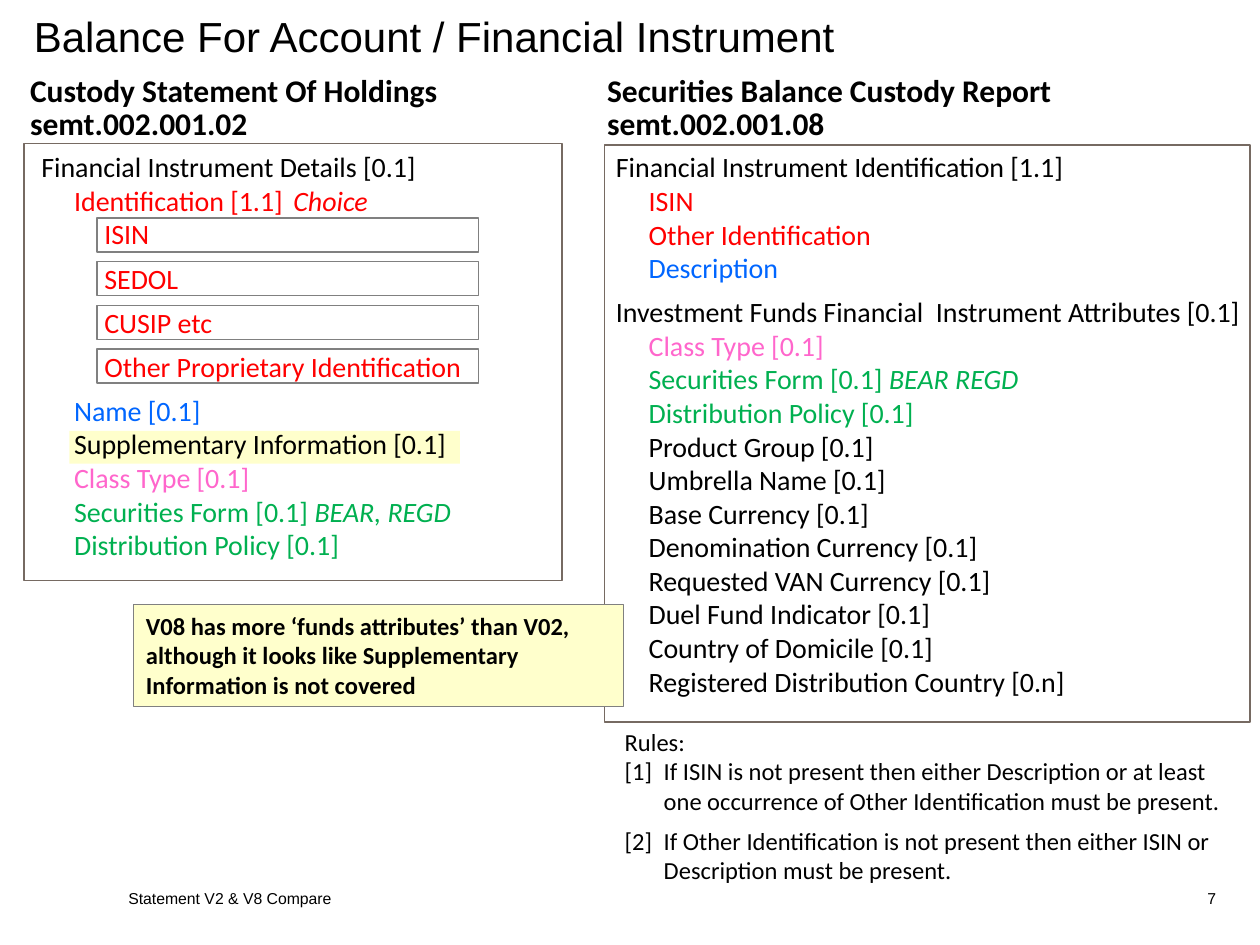
import dataclasses
import pptx
import pptx.dml.color
import pptx.enum.shapes
import pptx.enum.text
import pptx.oxml.ns
import pptx.util
from lxml import etree

ANCHOR = pptx.enum.text.MSO_ANCHOR
ALIGN = pptx.enum.text.PP_ALIGN
RECT = pptx.enum.shapes.MSO_SHAPE.RECTANGLE

SLIDE_W, SLIDE_H = pptx.util.Inches(10), pptx.util.Inches(7.5)
COL, ROW = SLIDE_W / 100, SLIDE_H / 75
TAB_STOPS = (2.6, 5)


@dataclasses.dataclass(frozen=True)
class Theme:
    sans: str = "Arial"
    body: str = "Calibri"
    black: str = "000000"
    red: str = "FF0000"
    blue: str = "0066FF"
    pink: str = "FF66CC"
    green: str = "00B050"
    yellow: str = "FFFFCC"
    frame: str = "766A62"
    grey: str = "808080"
    title: int = 24
    heading: int = 18
    text: int = 16
    small: int = 14
    footer: int = 9
    rule: float = 0.75


@dataclasses.dataclass(frozen=True)
class Box:
    x: float
    y: float
    w: float
    h: float

    def inner(self, dx, dy, w, h):
        return Box(self.x + dx, self.y + dy, w, h)

    def emu(self):
        return (round(self.x * COL), round(self.y * ROW),
                round(self.w * COL), round(self.h * ROW))


T = Theme()


def rgb(value):
    return pptx.dml.color.RGBColor.from_string(value)


def add_rect(s, box, fill=None, line=None):
    sp = s.shapes.add_shape(RECT, *box.emu())
    sp.shadow.inherit = False
    if fill:
        sp.fill.solid()
        sp.fill.fore_color.rgb = rgb(fill)
    else:
        sp.fill.background()
    if line:
        sp.line.color.rgb = rgb(line)
        sp.line.width = pptx.util.Pt(T.rule)
    else:
        sp.line.fill.background()
    return sp


def add_text(s, box, anchor=ANCHOR.TOP, wrap=True):
    tf = s.shapes.add_textbox(*box.emu()).text_frame
    tf.word_wrap = wrap
    tf.vertical_anchor = anchor
    return tf


def add_para(tf, after=0):
    p = tf.paragraphs[0]
    if p.runs:
        p = tf.add_paragraph()
    if after:
        p.space_after = pptx.util.Pt(after)
    return p


def add_run(p, text, size, color=T.black, font=T.body, bold=False, italic=False):
    r = p.add_run()
    r.text = text
    r.font.name, r.font.size = font, pptx.util.Pt(size)
    r.font.bold, r.font.italic = bold, italic
    r.font.color.rgb = rgb(color)


def add_field(tf, level, text, color=T.black, after=0, italic=""):
    p = add_para(tf, after)
    if level:
        qn = pptx.oxml.ns.qn
        tabs = etree.SubElement(p._p.get_or_add_pPr(), qn("a:tabLst"))
        for stop in TAB_STOPS[:level]:
            etree.SubElement(tabs, qn("a:tab"), pos=str(round(stop * COL)), algn="l")
    add_run(p, "\t" * level + text, T.text, color)
    if italic:
        add_run(p, italic, T.text, color, italic=True)


def title(s, box):
    p = add_para(add_text(s, box, ANCHOR.MIDDLE))
    add_run(p, "Balance For Account / Financial Instrument", T.title, font=T.sans)


def heading(s, box, lines):
    tf = add_text(s, box, wrap=False)
    for text in lines:
        p = add_para(tf)
        p.line_spacing = pptx.util.Pt(19)
        add_run(p, text, T.heading, bold=True)


def holdings_panel(s, box):
    add_rect(s, box, line=T.frame)
    add_rect(s, box.inner(3.6, 22.8, 31, 2.6), fill=T.yellow)
    tf = add_text(s, box.inner(0.4, 0, 35.8, 34))
    add_field(tf, 0, "Financial Instrument Details [0.1]")
    add_field(tf, 1, "Identification [1.1] \t", T.red, italic="Choice")
    choices = ("ISIN", "SEDOL", "CUSIP etc", "Other Proprietary Identification")
    for i, choice in enumerate(choices):
        add_field(tf, 2, choice, T.red, after=6)
        add_rect(s, box.inner(5.8, 5.9 + 3.47 * i, 30.3, 2.7), line=T.grey)
    add_field(tf, 1, "Name [0.1]", T.blue)
    add_field(tf, 1, "Supplementary Information [0.1]")
    add_field(tf, 1, "Class Type [0.1]", T.pink)
    add_field(tf, 1, "Securities Form [0.1] ", T.green, italic="BEAR, REGD")
    add_field(tf, 1, "Distribution Policy [0.1]", T.green)


def report_panel(s, box):
    tf = add_text(s, box.inner(-0.1, -0.1, 53, 44.9))
    add_field(tf, 0, "Financial Instrument Identification [1.1]")
    add_field(tf, 1, "ISIN", T.red)
    add_field(tf, 1, "Other Identification", T.red)
    add_field(tf, 1, "Description", T.blue, after=6)
    add_field(tf, 0, "Investment Funds Financial  Instrument Attributes [0.1]")
    add_field(tf, 1, "Class Type [0.1]", T.pink)
    add_field(tf, 1, "Securities Form [0.1] ", T.green, italic="BEAR REGD")
    add_field(tf, 1, "Distribution Policy [0.1]", T.green)
    for text in ("Product Group [0.1]", "Umbrella Name [0.1]", "Base Currency [0.1]",
                 "Denomination Currency [0.1]", "Requested VAN Currency [0.1]",
                 "Duel Fund Indicator [0.1]", "Country of Domicile [0.1]",
                 "Registered Distribution Country [0.n]"):
        add_field(tf, 1, text)
    add_rect(s, box, line=T.frame)


def note(s, box):
    tf = add_rect(s, box, T.yellow, T.grey).text_frame
    tf.word_wrap = True
    tf.vertical_anchor = ANCHOR.TOP
    p = add_para(tf)
    p.alignment = ALIGN.LEFT
    add_run(p, "V08 has more ‘funds attributes’ than V02, although it looks like "
               "Supplementary Information is not covered", T.small, bold=True)


def rules(s, box):
    tf = add_text(s, box)
    add_run(add_para(tf), "Rules:", T.small)
    items = (("[1]\tIf ISIN is not present then either Description or at least one "
              "occurrence of Other Identification must be present.", 6),
             ("[2]\tIf Other Identification is not present then either ISIN or "
              "Description must be present.", 0))
    indent = round(3.1 * COL)
    for text, after in items:
        p = add_para(tf, after)
        pPr = p._p.get_or_add_pPr()
        pPr.set("marL", str(indent))
        pPr.set("indent", str(-indent))
        add_run(p, text, T.small)


def footer(s, box):
    cells = ((box.inner(0, 0, 62.1, box.h), "Statement V2 & V8 Compare", ALIGN.LEFT),
             (box.inner(box.w - 8.3, 0, 8.3, box.h), "7", ALIGN.RIGHT))
    for cell, text, align in cells:
        p = add_para(add_text(s, cell, ANCHOR.MIDDLE))
        p.alignment = align
        add_run(p, text, T.footer, font=T.sans)


def main():
    prs = pptx.Presentation()
    prs.slide_width, prs.slide_height = SLIDE_W, SLIDE_H
    s = prs.slides.add_slide(prs.slide_layouts[6])
    title(s, Box(1.7, 0, 97.3, 5.6))
    heading(s, Box(1.4, 5.5, 34.6, 6.3),
            ("Custody Statement Of Holdings", "semt.002.001.02"))
    heading(s, Box(47.2, 5.5, 37.6, 6.3),
            ("Securities Balance Custody Report", "semt.002.001.08"))
    holdings_panel(s, Box(1.9, 11.4, 42.7, 34.7))
    report_panel(s, Box(48, 11.5, 51.2, 45.8))
    note(s, Box(10.6, 48, 38.9, 8.1))
    rules(s, Box(48.6, 57.2, 50.7, 13.6))
    footer(s, Box(9.2, 70, 88.3, 2.5))
    prs.save("out.pptx")


if __name__ == "__main__":
    main()
